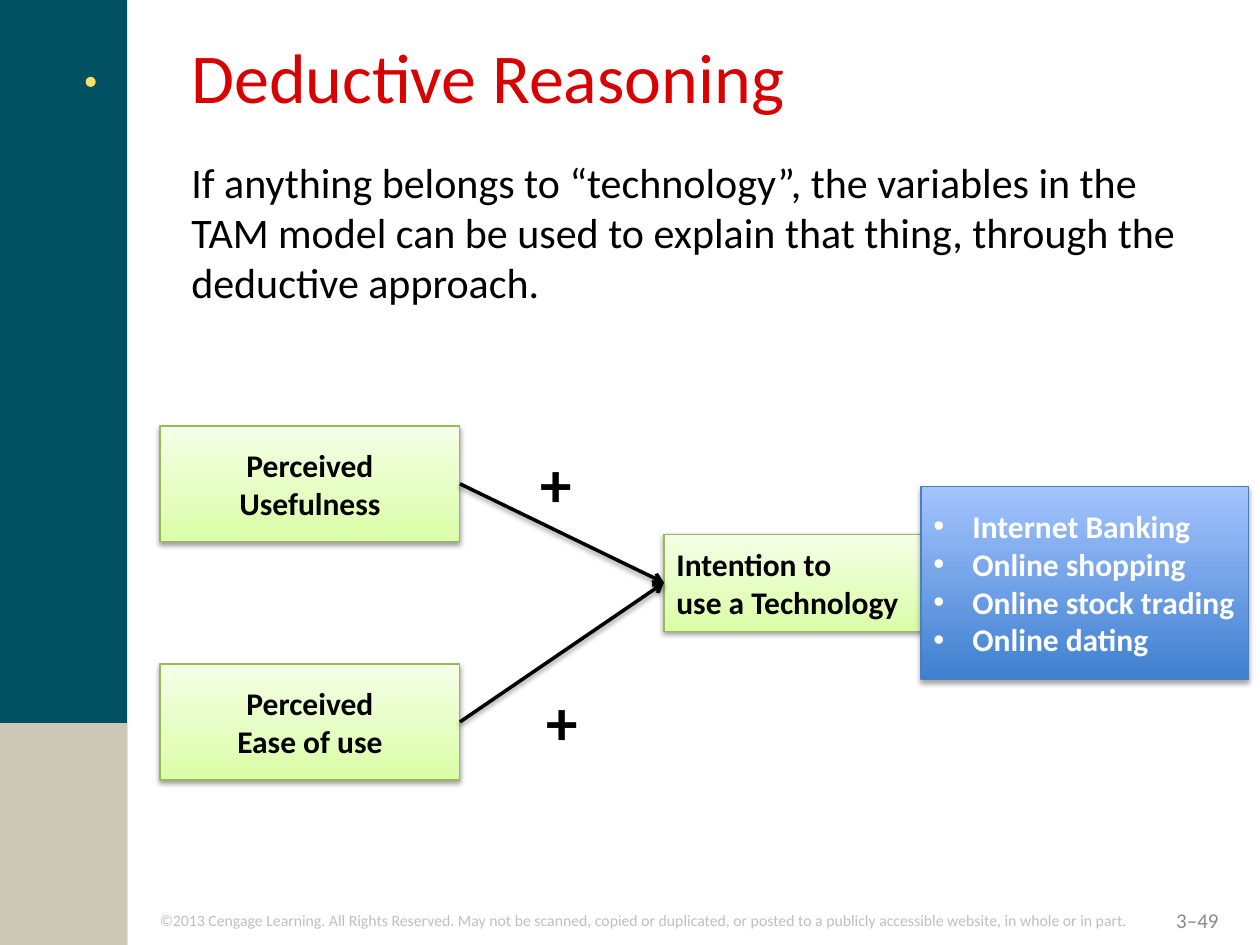
from lxml import etree
from pptx import Presentation
from pptx import util as u
from pptx.dml.color import RGBColor
from pptx.enum import shapes, text
from pptx.oxml import ns

TEAL = RGBColor(0x00, 0x50, 0x61)
SAND = RGBColor(0xCE, 0xC9, 0xB6)
YELLOW = RGBColor(0xFF, 0xDE, 0x6A)
RED = RGBColor(0xD8, 0x02, 0x02)
BLACK = RGBColor(0x00, 0x00, 0x00)
WHITE = RGBColor(0xFF, 0xFF, 0xFF)
GREY = RGBColor(0x89, 0x89, 0x89)
PALE_GREY = RGBColor(0xBF, 0xBF, 0xBF)
GREEN_LINE = RGBColor(0x98, 0xB9, 0x55)
GREEN_FILL = RGBColor(0xDA, 0xFD, 0xA7), RGBColor(0xF5, 0xFF, 0xE7)
BLUE_LINE = RGBColor(0x4B, 0x7E, 0xBC)
BLUE_FILL = RGBColor(0x3F, 0x80, 0xCE), RGBColor(0xA4, 0xC4, 0xFF)

LEFT, CENTER, RIGHT = text.PP_ALIGN.LEFT, text.PP_ALIGN.CENTER, text.PP_ALIGN.RIGHT
TOP, MIDDLE = text.MSO_ANCHOR.TOP, text.MSO_ANCHOR.MIDDLE
RECTANGLE, OVAL = shapes.MSO_SHAPE.RECTANGLE, shapes.MSO_SHAPE.OVAL


class SlideBuilder:
    font_name = "Calibri"

    def __init__(self, slide):
        self.slide = slide

    def fill_text(self, frame, lines, size, color, bold=False, align=LEFT, anchor=TOP, bullet=None):
        frame.word_wrap = True
        frame.vertical_anchor = anchor
        style = {"name": self.font_name, "size": u.Pt(size), "bold": bold}
        for index, line in enumerate(lines):
            paragraph = frame.add_paragraph() if index else frame.paragraphs[0]
            paragraph.alignment = align
            if bullet:
                properties = paragraph._p.get_or_add_pPr()
                properties.set("marL", str(u.Inches(0.31)))
                properties.set("indent", str(-u.Inches(0.31)))
                etree.SubElement(properties, ns.qn("a:buFont"), typeface="Arial")
                etree.SubElement(properties, ns.qn("a:buChar"), char=bullet)
            run = paragraph.add_run()
            run.text = line
            for key, value in style.items():
                setattr(run.font, key, value)
            run.font.color.rgb = color

    def shade(self, shape, alpha=38, distance=1.6):
        effects = etree.SubElement(shape._element.spPr, ns.qn("a:effectLst"))
        shadow = etree.SubElement(
            effects, ns.qn("a:outerShdw"), blurRad=str(u.Pt(3.1)), dist=str(u.Pt(distance)),
            dir="5400000", rotWithShape="0")
        shade = etree.SubElement(shadow, ns.qn("a:srgbClr"), val=str(BLACK))
        etree.SubElement(shade, ns.qn("a:alpha"), val=str(alpha * 1000))

    def shape(self, kind, place):
        return self.slide.shapes.add_shape(kind, *map(u.Inches, place))

    def decoration(self, kind, place, color):
        decoration = self.shape(kind, place)
        decoration.shadow.inherit = False
        decoration.fill.solid()
        decoration.fill.fore_color.rgb = color
        decoration.line.fill.background()

    def text(self, place, line, size, color, **style):
        box = self.slide.shapes.add_textbox(*map(u.Inches, place))
        self.fill_text(box.text_frame, [line], size, color, **style)

    def box(self, place, lines, fill, outline, color=BLACK, shadow=(38, 1.6), **style):
        box = self.shape(RECTANGLE, place)
        box.fill.gradient()
        box.fill.gradient_angle = 90
        for position, (stop, stop_color) in enumerate(zip(box.fill.gradient_stops, fill)):
            stop.color.rgb = stop_color
            stop.position = position
        box.line.color.rgb = outline
        box.line.width = u.Pt(0.75)
        self.shade(box, *shadow)
        self.fill_text(box.text_frame, lines, 18, color, bold=True, anchor=MIDDLE, **style)
        return box

    def arrow(self, cause, effect):
        arrow = self.slide.shapes.add_connector(shapes.MSO_CONNECTOR.STRAIGHT, 0, 0, 0, 0)
        arrow.begin_connect(cause, 3)
        arrow.end_connect(effect, 1)
        arrow.line.color.rgb = BLACK
        arrow.line.width = u.Pt(2)
        etree.SubElement(arrow._element.spPr.find(ns.qn("a:ln")), ns.qn("a:tailEnd"), type="arrow")
        self.shade(arrow)


def main():
    deck = Presentation()
    deck.slide_width, deck.slide_height = u.Inches(10), u.Inches(7.5)
    page = SlideBuilder(deck.slides.add_slide(deck.slide_layouts[6]))

    page.decoration(RECTANGLE, (0, 0, 1.01, 7.5), TEAL)
    page.decoration(RECTANGLE, (0, 5.74, 1.01, 1.76), SAND)
    page.decoration(OVAL, (0.68, 0.61, 0.08, 0.08), YELLOW)
    page.text(
        (1.17, 7.18, 8.83, 0.25),
        "©2013 Cengage Learning. All Rights Reserved. May not be scanned, copied or duplicated, "
        "or posted to a publicly accessible website, in whole or in part.", 9, PALE_GREY)
    page.text((7.44, 7.1, 2.33, 0.4), "3–49", 12, GREY, align=RIGHT, anchor=MIDDLE)
    page.text((1.42, 0.22, 8.49, 0.96), "Deductive Reasoning", 40, RED)

    usefulness, ease = [
        page.box((1.27, top, 2.38, 0.92), ["Perceived", factor], GREEN_FILL, GREEN_LINE, align=CENTER)
        for top, factor in ((3.38, "Usefulness"), (5.27, "Ease of use"))]
    intention = page.box(
        (5.27, 4.24, 2.23, 0.77), ["Intention to", "use a Technology"], GREEN_FILL, GREEN_LINE)
    for cause in (usefulness, ease):
        page.arrow(cause, intention)
    for left, top in ((4.19, 3.48), (4.24, 5.37)):
        page.text((left, top, 0.62, 0.7), "+", 36, BLACK, bold=True)

    page.box(
        (7.31, 3.86, 2.6, 1.53),
        ["Internet Banking", "Online shopping", "Online stock trading", "Online dating"],
        BLUE_FILL, BLUE_LINE, color=WHITE, shadow=(35, 1.8), bullet="•")
    page.text(
        (1.42, 1.19, 8.01, 1.31),
        "If anything belongs to “technology”, the variables in the TAM model can be used "
        "to explain that thing, through the deductive approach.", 24, BLACK)

    deck.save("out.pptx")


if __name__ == "__main__":
    main()
